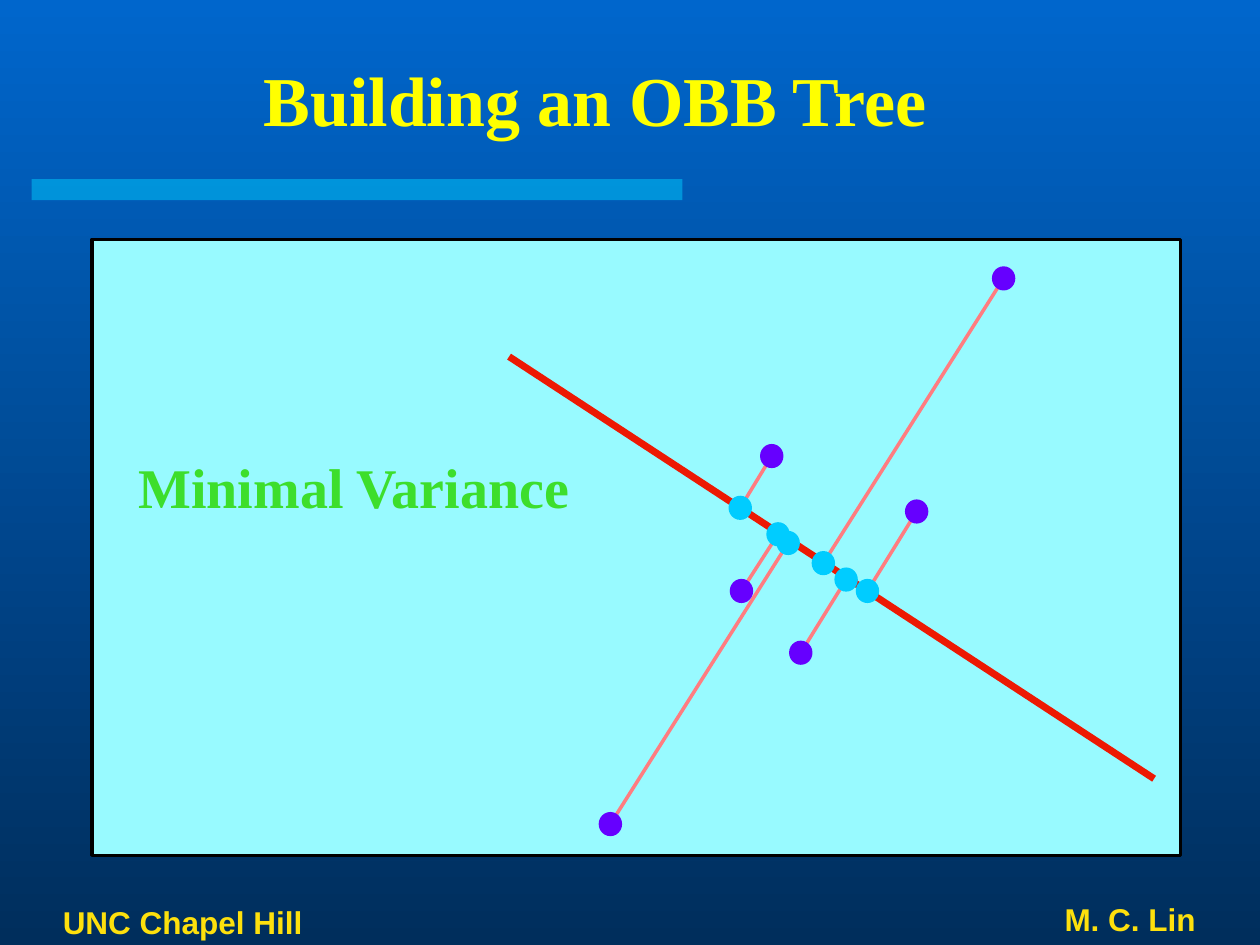
import pptx
import pptx.util
import pptx.dml.color
import pptx.enum.shapes
import pptx.enum.text
import pptx.oxml.ns
import pptx.oxml.xmlchemy

Pt = pptx.util.Pt
RGBColor = pptx.dml.color.RGBColor
SHAPE = pptx.enum.shapes.MSO_SHAPE
ALIGN = pptx.enum.text.PP_ALIGN
ANCHOR = pptx.enum.text.MSO_ANCHOR
qn = pptx.oxml.ns.qn
OxmlElement = pptx.oxml.xmlchemy.OxmlElement

BLUE_TOP = RGBColor(0x00, 0x66, 0xCC)
BLUE_BOTTOM = RGBColor(0x00, 0x2E, 0x5C)
CYAN = RGBColor(0x00, 0xCC, 0xFF)
PALE_CYAN = RGBColor(0x98, 0xFA, 0xFF)
PURPLE = RGBColor(0x66, 0x00, 0xFF)
RED = RGBColor(0xED, 0x19, 0x03)
PINK = RGBColor(0xFF, 0x7C, 0x80)
GREEN = RGBColor(0x3D, 0xDE, 0x2C)
YELLOW = RGBColor(0xFF, 0xFF, 0x00)
GOLD = RGBColor(0xFD, 0xE0, 0x0D)
BLACK = RGBColor(0x00, 0x00, 0x00)

DOT_W, DOT_H = 12.4, 12.8

# Each data point with its projection onto the axis
PROJECTIONS = [
    ((441, 260.6), (423, 290.2)),
    ((423.7, 337.7), (444.6, 305.3)),
    ((348.8, 470.9), (450.4, 310.3)),
    ((573.5, 159.1), (470.5, 321.8)),
    ((457.6, 373), (483.5, 331.2)),
    ((523.8, 292.3), (495.7, 337.7)),
]

prs = pptx.Presentation()
prs.slide_width, prs.slide_height = Pt(720), Pt(540)
s = prs.slides.add_slide(prs.slide_layouts[5])


def add_shape(kind, box, fill, line=None, width=1):
    sp = s.shapes.add_shape(kind, *[Pt(v) for v in box])
    sp.shadow.inherit = False
    sp.fill.solid()
    sp.fill.fore_color.rgb = fill
    if line is None:
        sp.line.fill.background()
    else:
        sp.line.color.rgb = line
        sp.line.width = Pt(width)
    return sp


def add_line(start, end, color, width):
    ln = s.shapes.add_connector(pptx.enum.shapes.MSO_CONNECTOR.STRAIGHT,
                                *[Pt(v) for v in start + end])
    ln.line.color.rgb = color
    ln.line.width = Pt(width)
    ln._element.spPr.append(OxmlElement("a:effectLst"))


# Background gradient, light at the top
bg = s.background.fill
bg.gradient()
bg.gradient_angle = 270
for stop, color in zip(bg.gradient_stops, (BLUE_TOP, BLUE_BOTTOM)):
    stop.color.rgb = color

# Translucent bar under the title
bar = add_shape(SHAPE.RECTANGLE, (18, 102.4, 372, 12), CYAN)
alpha = OxmlElement("a:alpha")
alpha.set("val", "50000")
bar._element.spPr.find(".//" + qn("a:srgbClr")).append(alpha)

# Diagram panel and axis of least variance
add_shape(SHAPE.RECTANGLE, (52.6, 136.8, 622, 352), PALE_CYAN, BLACK, 2)
add_line((659.5, 445), (290.9, 203.8), RED, 4)

# Projection lines, then the dots at their ends
for point, foot in PROJECTIONS:
    add_line(point, foot, PINK, 2)
for point, foot in PROJECTIONS:
    for (x, y), color in ((foot, CYAN), (point, PURPLE)):
        add_shape(SHAPE.OVAL, (x - DOT_W / 2, y - DOT_H / 2, DOT_W, DOT_H),
                  color, color)

# Diagram label and footers
for text, box, size, font, color, align, anchor in [
    ("Minimal Variance", (72, 254.9, 264, 45.4), 32, "Times New Roman", GREEN,
     ALIGN.LEFT, ANCHOR.TOP),
    ("UNC Chapel Hill", (28.8, 514, 153, 26), 18, "Arial", GOLD,
     ALIGN.LEFT, ANCHOR.MIDDLE),
    ("M. C. Lin", (375.8, 510.5, 314.6, 29.5), 18, "Arial", GOLD,
     ALIGN.RIGHT, ANCHOR.MIDDLE),
]:
    tf = s.shapes.add_textbox(*[Pt(v) for v in box]).text_frame
    tf.word_wrap = True
    tf.vertical_anchor = anchor
    p = tf.paragraphs[0]
    p.alignment = align
    r = p.add_run()
    r.text = text
    r.font.size, r.font.name, r.font.bold = Pt(size), font, True
    r.font.color.rgb = color

# Title
title = s.shapes.title
title.left, title.top, title.width, title.height = Pt(21), Pt(23), Pt(638), Pt(67)
title.text_frame.vertical_anchor = ANCHOR.MIDDLE
p = title.text_frame.paragraphs[0]
p.alignment = ALIGN.CENTER
r = p.add_run()
r.text = "Building an OBB Tree"
r.font.size, r.font.name, r.font.bold = Pt(40), "Times New Roman", True
r.font.color.rgb = YELLOW

prs.save("out.pptx")
